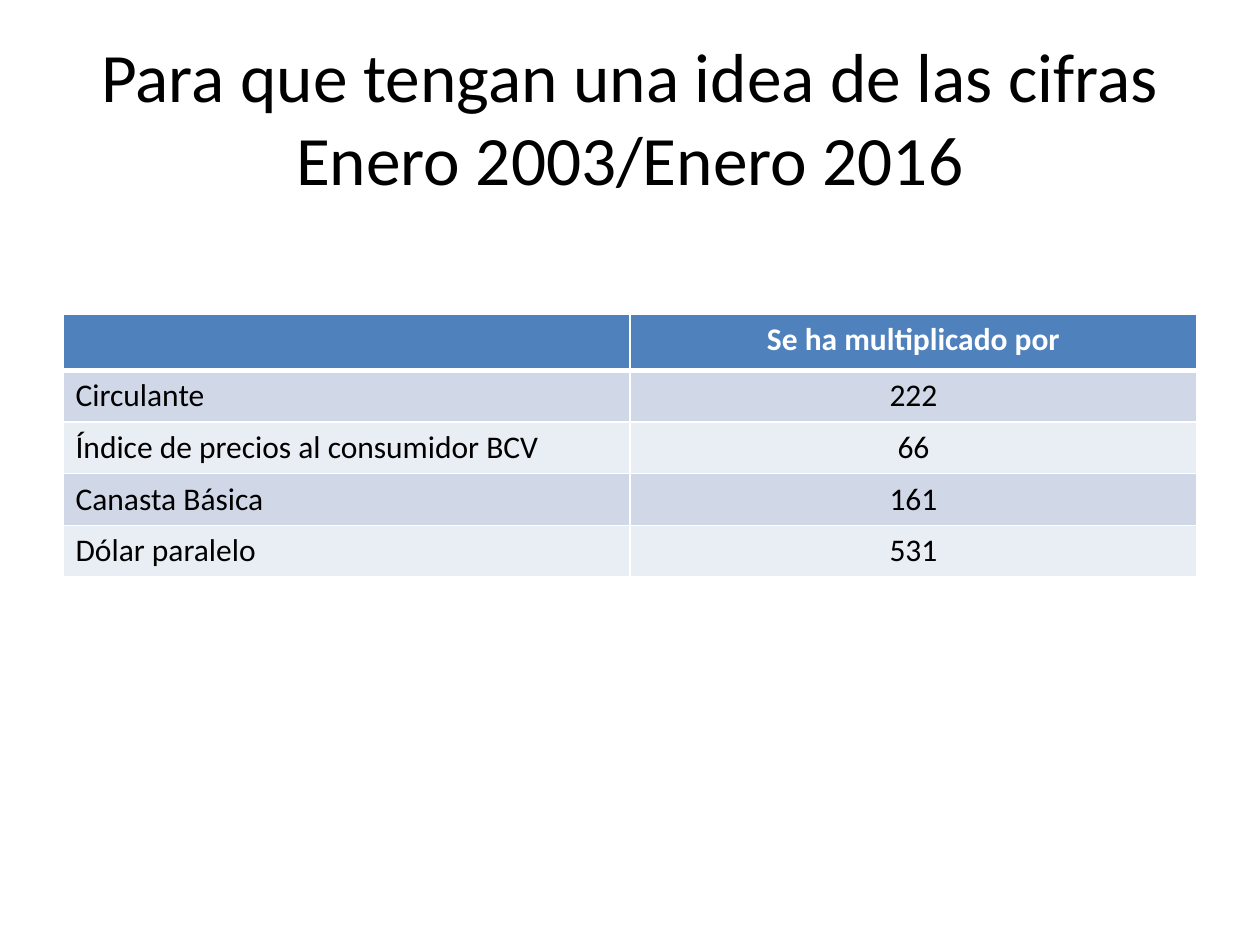
from pptx import Presentation
from pptx.dml.color import RGBColor
from pptx.enum.text import MSO_ANCHOR as Anchor, PP_ALIGN as Align
from pptx.oxml import parse_xml
from pptx.oxml.ns import nsdecls
from pptx.util import Inches, Pt

COLORS = {
    "text": "000000",
    "white": "FFFFFF",
    "header": "4F81BD",
    "odd_row": "D0D8E8",
    "even_row": "E9EDF4",
}
TITLE = "Para que tengan una idea de las cifras Enero 2003/Enero 2016"
ROWS = [
    ("", "Se ha multiplicado por"),
    ("Circulante", "222"),
    ("Índice de precios al consumidor BCV", "66"),
    ("Canasta Básica", "161"),
    ("Dólar paralelo", "531"),
]


class SlideBuilder:
    font = "Calibri"

    def __init__(self, slide):
        self.s = slide

    def style(self, p, size, color, align, bold=False):
        p.alignment = align
        for r in p.runs:
            r.font.name = self.font
            r.font.size = Pt(size)
            r.font.bold = bold
            r.font.color.rgb = RGBColor.from_string(COLORS[color])

    def title(self, text, left, top, width, height):
        sp = self.s.shapes.title
        sp.left, sp.top = Inches(left), Inches(top)
        sp.width, sp.height = Inches(width), Inches(height)
        tf = sp.text_frame
        tf.text = text
        tf.word_wrap = True
        tf.vertical_anchor = Anchor.MIDDLE
        self.style(tf.paragraphs[0], 39.6, "text", Align.CENTER)

    def borders(self, cell, widths):
        """Draw white cell borders; widths maps each side (L, R, T, B) to points."""
        tcPr = cell._tc.get_or_add_tcPr()
        for i, (side, width) in enumerate(widths.items()):
            tcPr.insert(i, parse_xml(
                f'<a:ln{side} {nsdecls("a")} w="{Pt(width)}"><a:solidFill>'
                f'<a:srgbClr val="{COLORS["white"]}"/></a:solidFill></a:ln{side}>'))

    def table(self, rows, left, top, col_width, header_height, row_height):
        n_cols = len(rows[0])
        height = header_height + row_height * (len(rows) - 1)
        table = self.s.shapes.add_table(
            len(rows), n_cols, Inches(left), Inches(top),
            Inches(col_width * n_cols), Inches(height)).table
        for i, row in enumerate(rows):
            header = i == 0
            table.rows[i].height = Inches(header_height if header else row_height)
            fill = "header" if header else "odd_row" if i % 2 else "even_row"
            widths = {"L": 1, "R": 1, "T": 3 if i == 1 else 1, "B": 3 if header else 1}
            for j, text in enumerate(row):
                cell = table.cell(i, j)
                cell.text = text
                cell.fill.solid()
                cell.fill.fore_color.rgb = RGBColor.from_string(COLORS[fill])
                self.borders(cell, widths)
                self.style(cell.text_frame.paragraphs[0], 18,
                           "white" if header else "text",
                           Align.CENTER if j else Align.LEFT, bold=header)


def main():
    prs = Presentation()
    prs.slide_width, prs.slide_height = Inches(10), Inches(7.5)
    title_only = prs.slide_layouts[5]
    builder = SlideBuilder(prs.slides.add_slide(title_only))
    builder.title(TITLE, 0.5, 0.3, 9, 1.25)
    builder.table(ROWS, 0.5, 2.49, col_width=4.5, header_height=0.45, row_height=0.41)
    prs.save("out.pptx")


if __name__ == "__main__":
    main()
